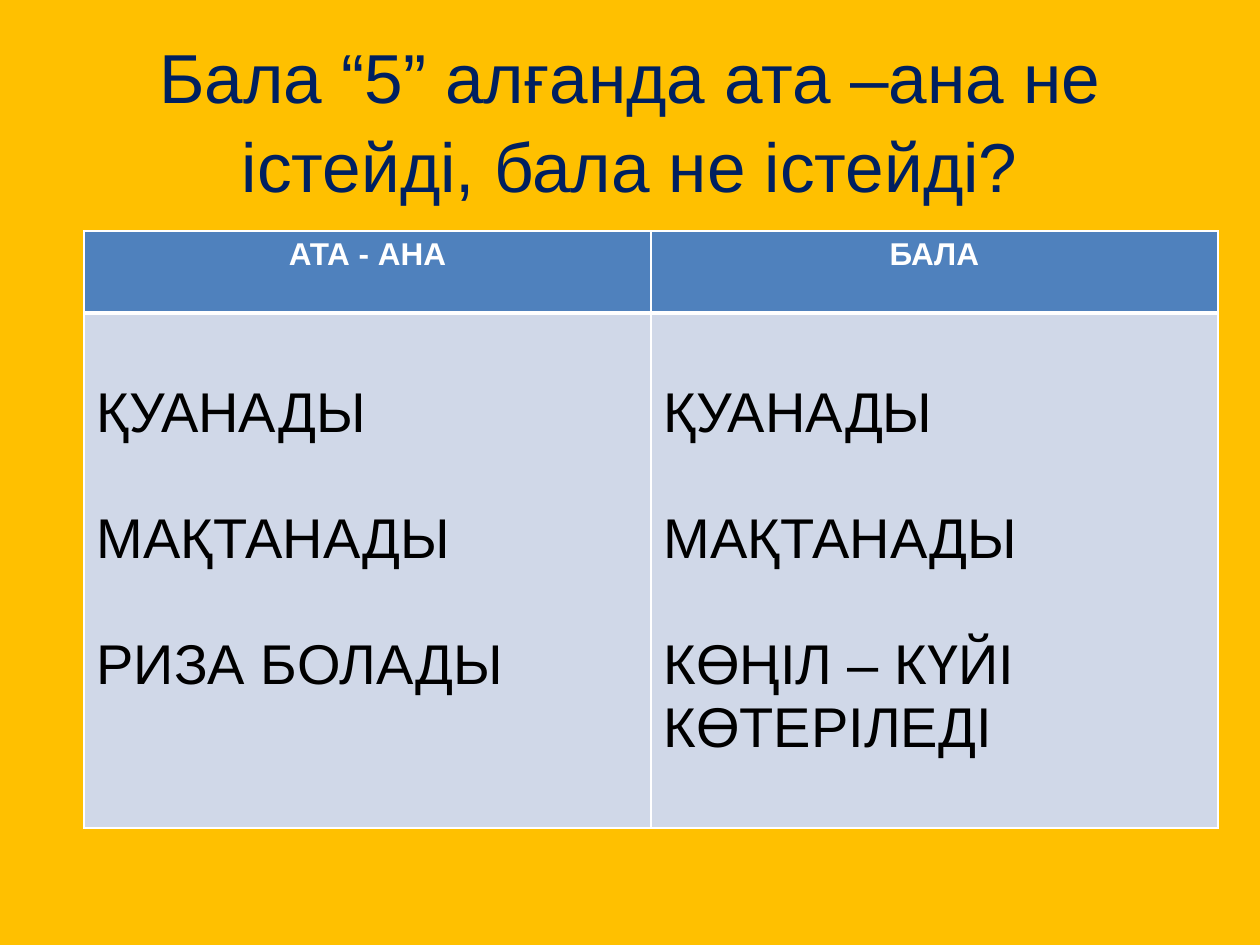
from lxml import etree
from pptx import Presentation
from pptx import util as u
from pptx.dml.color import RGBColor
from pptx.enum import text
from pptx.oxml.ns import qn

EMU_PER_PX = 914400 // 126
FONT = "Arial"
GOLD, NAVY, BLUE, PALE = "FFC000", "002060", "4F81BD", "D0D8E8"
WHITE, BLACK = "FFFFFF", "000000"

QUESTION = "Бала “5” алғанда ата –ана не істейді, бала не істейді?"
REACTIONS = {
    "АТА - АНА": ["ҚУАНАДЫ", "МАҚТАНАДЫ", "РИЗА БОЛАДЫ"],
    "БАЛА": ["ҚУАНАДЫ", "МАҚТАНАДЫ", "КӨҢІЛ – КҮЙІ КӨТЕРІЛЕДІ"],
}


def px(length):
    return u.Emu(length * EMU_PER_PX)


def rgb(value):
    return RGBColor.from_string(value)


def write(frame, lines, size, color, bold=False, align=text.PP_ALIGN.LEFT,
          spacing=1.0, gap=0):
    """Write one paragraph per line, with gap points between paragraphs."""
    for index, line in enumerate(lines):
        paragraph = frame.paragraphs[0] if index == 0 else frame.add_paragraph()
        paragraph.alignment = align
        paragraph.line_spacing = spacing
        paragraph.space_before = u.Pt(gap if index else 0)
        run = paragraph.add_run()
        run.text = line
        run.font.name = FONT
        run.font.size = u.Pt(size)
        run.font.bold = bold
        run.font.color.rgb = rgb(color)


def add_title(slide):
    frame = slide.shapes.add_textbox(px(63), px(38), px(1134), px(158)).text_frame
    frame.word_wrap = True
    frame.vertical_anchor = text.MSO_ANCHOR.MIDDLE
    write(frame, [QUESTION], size=39.6, color=NAVY,
          align=text.PP_ALIGN.CENTER, spacing=1.08)


def set_borders(cell, **widths):
    """Draw white cell borders; widths in points, keyed lnL, lnR, lnT, lnB."""
    properties = cell._tc.get_or_add_tcPr()
    for index, (side, width) in enumerate(widths.items()):
        line = etree.Element(qn(f"a:{side}"), w=str(u.Pt(width)))
        fill = etree.SubElement(line, qn("a:solidFill"))
        etree.SubElement(fill, qn("a:srgbClr"), val=WHITE)
        properties.insert(index, line)


def fill_cell(cell, color):
    cell.fill.solid()
    cell.fill.fore_color.rgb = rgb(color)


def add_reactions(slide):
    column_width, heights = 567, (82, 515)
    table = slide.shapes.add_table(
        len(heights), len(REACTIONS), px(84), px(231),
        px(column_width * len(REACTIONS)), px(sum(heights))).table
    for row, height in zip(table.rows, heights):
        row.height = px(height)

    for index, (person, reactions) in enumerate(REACTIONS.items()):
        table.columns[index].width = px(column_width)
        header, body = table.cell(0, index), table.cell(1, index)
        fill_cell(header, BLUE)
        write(header.text_frame, [person], size=18, color=WHITE, bold=True,
              align=text.PP_ALIGN.CENTER)
        set_borders(header, lnL=1, lnR=1, lnT=1, lnB=3)
        fill_cell(body, PALE)
        body.margin_top = px(69)
        write(body.text_frame, reactions, size=32, color=BLACK, gap=36)
        set_borders(body, lnL=1, lnR=1, lnT=3, lnB=1)


def main():
    deck = Presentation()
    deck.slide_width, deck.slide_height = px(1260), px(945)
    slide = deck.slides.add_slide(deck.slide_layouts[6])
    slide.background.fill.solid()
    slide.background.fill.fore_color.rgb = rgb(GOLD)
    add_title(slide)
    add_reactions(slide)
    deck.save("out.pptx")


if __name__ == "__main__":
    main()
